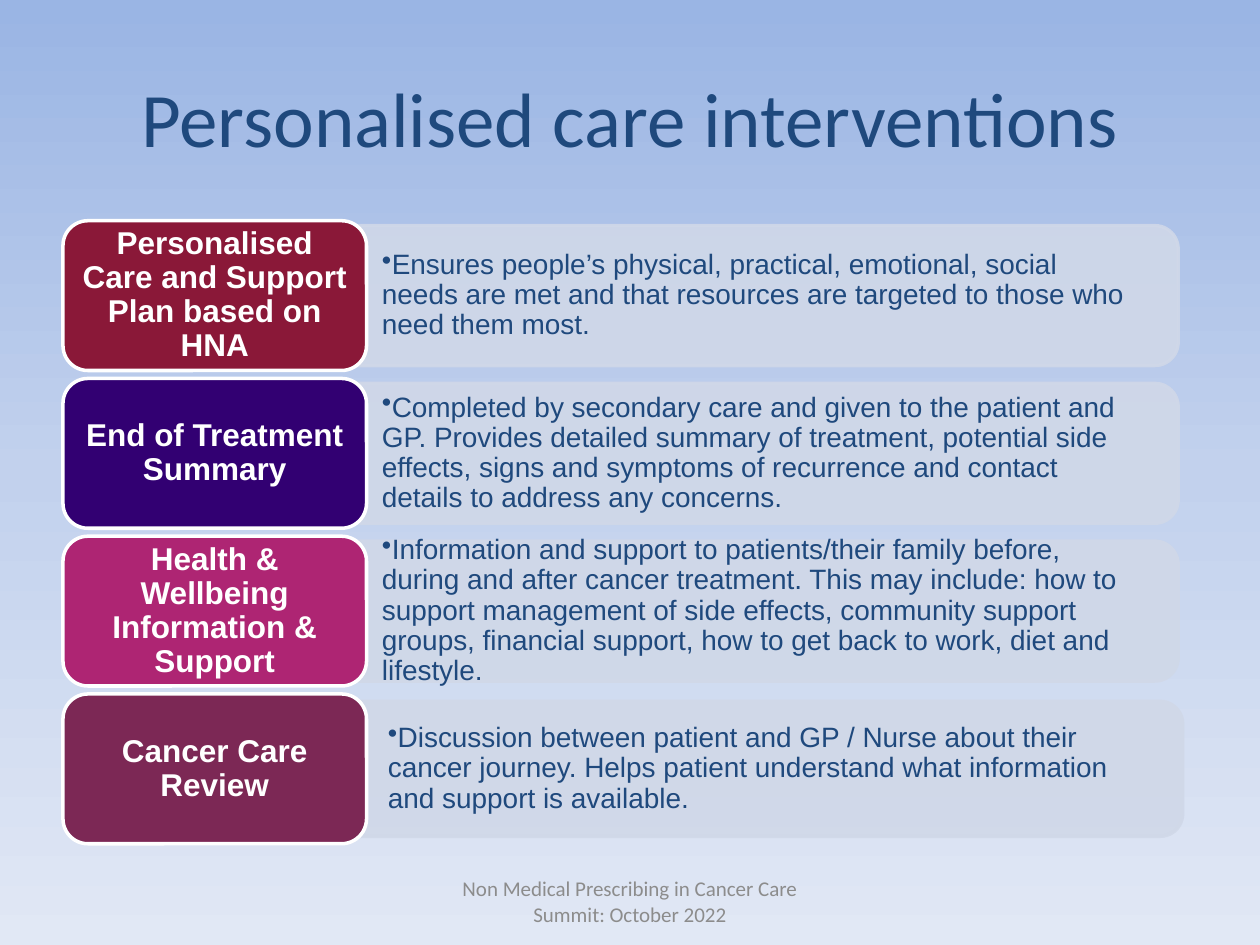
from copy import deepcopy
from dataclasses import dataclass

from pptx import Presentation
from pptx import util as u
from pptx.dml.color import RGBColor
from pptx.enum import shapes, text
from pptx.oxml import ns, xmlchemy

TITLE = "Personalised care interventions"
FOOTER = "Non Medical Prescribing in Cancer Care Summit: October 2022"
INTERVENTIONS = [
    ("Personalised Care and Support Plan based on HNA", "8A1838",
     "Ensures people’s physical, practical, emotional, social needs are met and "
     "that resources are targeted to those who need them most."),
    ("End of Treatment Summary", "320072",
     "Completed by secondary care and given to the patient and GP. Provides detailed "
     "summary of treatment, potential side effects, signs and symptoms of recurrence "
     "and contact details to address any concerns."),
    ("Health & Wellbeing Information & Support", "AE2573",
     "Information and support to patients/their family before, during and after cancer "
     "treatment. This may include: how to support management of side effects, community "
     "support groups, financial support, how to get back to work, diet and lifestyle."),
    ("Cancer Care Review", "7C2855",
     "Discussion between patient and GP / Nurse about their cancer journey. Helps patient "
     "understand what information and support is available."),
]
BAR = (7.01, 16.74, 2.82)
LAST_BAR = (7.13, 16.71, 2.72)
TILE_LEFT, TILE_TOP, TILE_WIDTH, TILE_HEIGHT = 1.27, 4.45, 6.12, 3.02
ROW_STEP = 3.18


@dataclass(frozen=True)
class Theme:
    gradient: tuple = ((0, "9AB5E4"), (0.5, "C2D1ED"), (1, "E1E8F5"))
    ink: str = "1F497D"
    footer: str = "8C8C8C"
    bar: str = "D0D8E8"
    white: str = "FFFFFF"
    bar_opacity: int = 90
    title_size: int = 44
    tile_size: int = 18
    detail_size: int = 16
    footer_size: int = 12
    title_font: str = "Calibri"
    body_font: str = "Arial"


THEME = Theme()


def rgb(value):
    return RGBColor.from_string(value)


def paint_background(slide):
    fill = slide.background.fill
    fill.gradient()
    fill.gradient_angle = 270
    stops = slide.element.xpath(".//a:gsLst")[0]
    stops.insert(1, deepcopy(stops[0]))
    for stop, (position, color) in zip(fill.gradient_stops, THEME.gradient):
        stop.position = position
        stop.color.rgb = rgb(color)


def write(box, wording, font, size, color, align, margins, bold=False, spacing=None):
    frame = box.text_frame
    frame.text = wording
    frame.word_wrap = True
    frame.auto_size = text.MSO_AUTO_SIZE.NONE
    frame.vertical_anchor = text.MSO_ANCHOR.MIDDLE
    frame.margin_left = frame.margin_right = u.Cm(margins[0])
    frame.margin_top = frame.margin_bottom = u.Cm(margins[1])
    para = frame.paragraphs[0]
    para.alignment = align
    para.line_spacing = spacing
    span = para.runs[0].font
    span.name, span.size, span.bold = font, u.Pt(size), bold
    span.color.rgb = rgb(color)
    return para


def add_block(slide, preset, left, top, width, height, fill, line):
    block = slide.shapes.add_shape(preset, *map(u.Cm, (left, top, width, height)))
    block.shadow.inherit = False
    block.fill.solid()
    block.fill.fore_color.rgb = rgb(fill)
    block.line.color.rgb = rgb(line)
    block.line.width = u.Pt(2)
    return block


def add_bullet(para):
    props = para._p.get_or_add_pPr()
    props.set("marL", "0")
    props.set("indent", "0")
    bullet = xmlchemy.OxmlElement("a:buChar")
    bullet.set("char", "•")
    props.append(bullet)


def add_bar(slide, left, middle, width, height):
    bar = add_block(slide, shapes.MSO_SHAPE.ROUND_2_SAME_RECTANGLE,
                    left + (width - height) / 2, middle - width / 2,
                    height, width, THEME.bar, THEME.bar)
    bar.rotation = 90
    for color in bar._element.spPr.iter(ns.qn("a:srgbClr")):
        alpha = xmlchemy.OxmlElement("a:alpha")
        alpha.set("val", str(THEME.bar_opacity * 1000))
        color.append(alpha)


def add_intervention(slide, index, heading, color, detail):
    top = TILE_TOP + index * ROW_STEP
    middle = top + TILE_HEIGHT / 2
    left, width, height = LAST_BAR if index == len(INTERVENTIONS) - 1 else BAR
    add_bar(slide, left, middle, width, height)

    text_height = height - 0.27
    box = slide.shapes.add_textbox(u.Cm(left), u.Cm(middle - text_height / 2),
                                   u.Cm(width - 0.13), u.Cm(text_height))
    para = write(box, detail, THEME.body_font, THEME.detail_size, THEME.ink,
                 text.PP_ALIGN.LEFT, (0.69, 0.36), spacing=0.9)
    add_bullet(para)

    tile = add_block(slide, shapes.MSO_SHAPE.ROUNDED_RECTANGLE, TILE_LEFT, top,
                     TILE_WIDTH, TILE_HEIGHT, color, THEME.white)
    write(tile, heading, THEME.body_font, THEME.tile_size, THEME.white,
          text.PP_ALIGN.CENTER, (0.18, 0.1), bold=True, spacing=0.9)


def main():
    deck = Presentation()
    deck.slide_width, deck.slide_height = u.Cm(25.4), u.Cm(19.05)
    page = deck.slides.add_slide(deck.slide_layouts[5])
    paint_background(page)

    title = page.shapes.title
    title.left, title.top, title.width, title.height = map(
        u.Cm, (1.27, 0.76, 22.86, 3.18))
    write(title, TITLE, THEME.title_font, THEME.title_size, THEME.ink,
          text.PP_ALIGN.CENTER, (0.25, 0.13))

    footer = page.shapes.add_textbox(*map(u.Cm, (8.68, 17.66, 8.04, 1.01)))
    write(footer, FOOTER, THEME.title_font, THEME.footer_size, THEME.footer,
          text.PP_ALIGN.CENTER, (0.25, 0.13))

    for index, intervention in enumerate(INTERVENTIONS):
        add_intervention(page, index, *intervention)
    deck.save("out.pptx")


if __name__ == "__main__":
    main()
